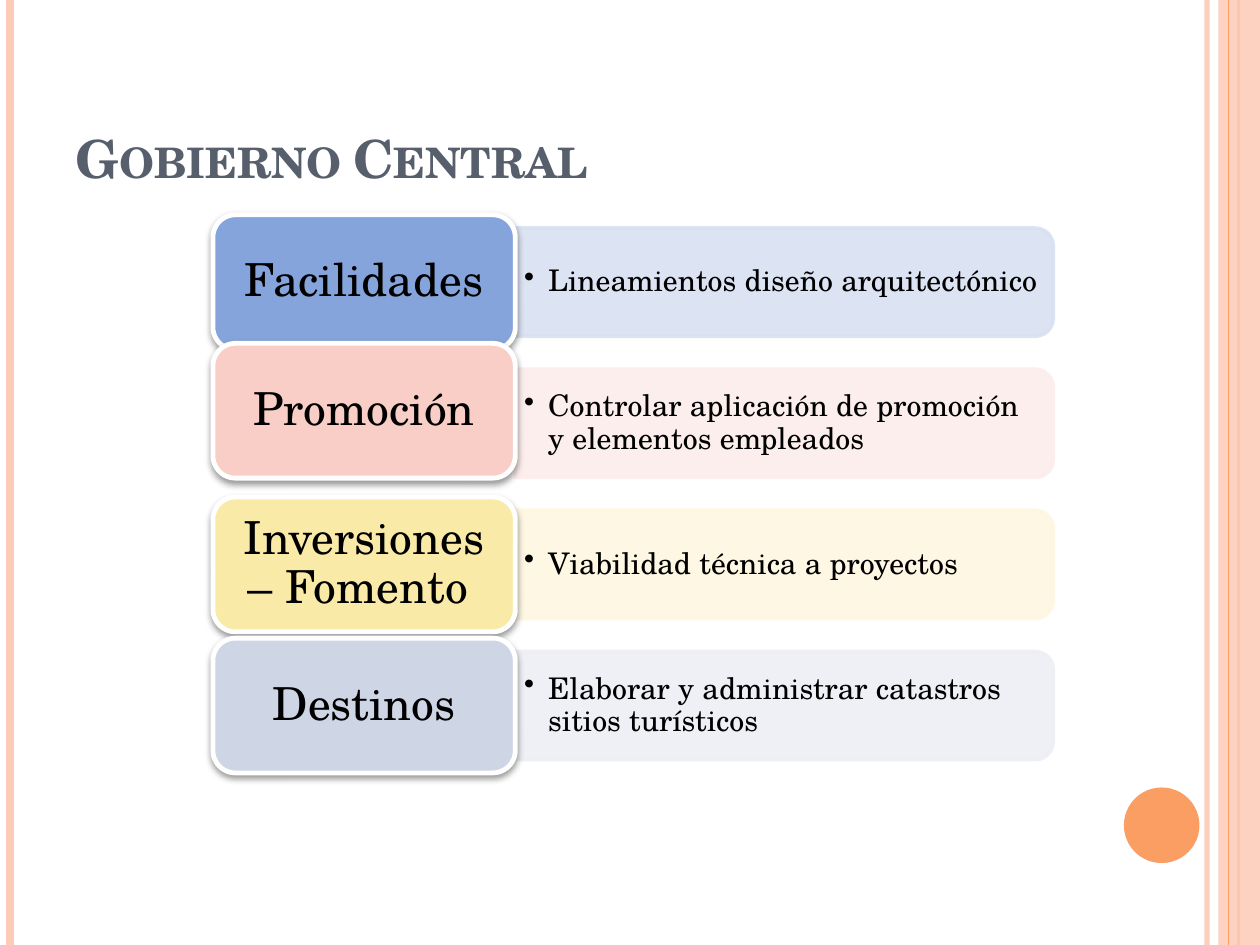
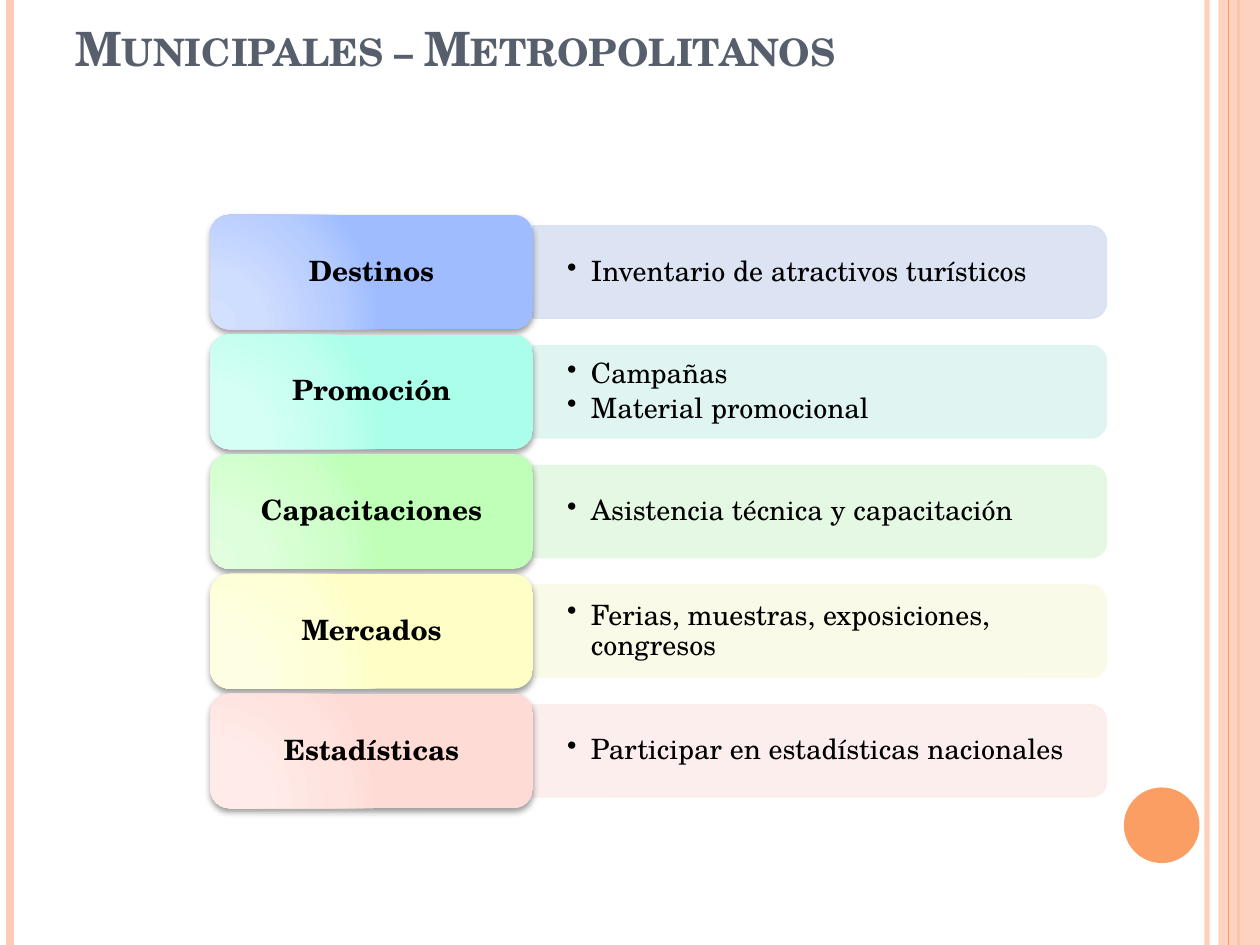
import pptx
import pptx.util
import pptx.dml.color
import pptx.enum.shapes
import pptx.enum.text
import pptx.oxml
import pptx.oxml.ns
from lxml import etree

RGB = pptx.dml.color.RGBColor
SHAPE = pptx.enum.shapes.MSO_SHAPE
STRAIGHT = pptx.enum.shapes.MSO_CONNECTOR.STRAIGHT
ANCHOR = pptx.enum.text.MSO_ANCHOR
Inches, Pt, qn = pptx.util.Inches, pptx.util.Pt, pptx.oxml.ns.qn

# Shared look
FONT = "TeX Gyre Schola"
SLIDE_W, SLIDE_H = 10, 7.5
PEACH, ORANGE = RGB(0xFD, 0xCC, 0xB8), RGB(0xFB, 0x9E, 0x64)
SLATE, BLACK, WHITE = RGB(0x57, 0x5F, 0x6D), RGB(0, 0, 0), RGB(255, 255, 255)
BLUE_TINT, PINK_TINT = RGB(0xD9, 0xE0, 0xF2), RGB(0xFC, 0xED, 0xEB)
CREAM_TINT, GREY_TINT = RGB(0xFD, 0xF7, 0xE1), RGB(0xED, 0xEF, 0xF5)
AQUA_TINT, GREEN_TINT = RGB(0xDD, 0xF5, 0xF1), RGB(0xE3, 0xF8, 0xE1)
YELLOW_TINT = RGB(0xFA, 0xFA, 0xE6)
BLUE, PINK = RGB(0x86, 0xA4, 0xDC), RGB(0xF8, 0xCE, 0xC7)
YELLOW, GREY = RGB(0xFA, 0xEA, 0xA8), RGB(0xCE, 0xD5, 0xE5)
GRADIENT_STOPS = (0, 30, 75, 100)
BLUE_GLOW = ("D3E0FF", "CFDDFF", "B6CCFF", "9EBCFF")
AQUA_GLOW = ("D8FFF5", "D5FFF4", "C0FFEF", "ABFFEA")
GREEN_GLOW = ("E1FFDE", "DEFFDB", "CEFFC9", "BFFFB8")
YELLOW_GLOW = ("FEFFE4", "FEFFE2", "FEFFD4", "FEFFC6")
PINK_GLOW = ("FFEEEB", "FFECE9", "FFE3DF", "FFDBD5")

# Rules of the frame: x, colour, width, opacity
RULES = [(9.58, PEACH, 3, 93), (0.08, PEACH, 4.5, 100), (9.83, ORANGE, 1.5, 100)]
TOP_RULE = (9.75, ORANGE, 0.75, 100)

# Each row: label, details, label fill, band tint, vertical shift of the label
SLIDES = [
    dict(title="Gobierno Central", title_size=30, title_bottom=0.05,
         left=1.69, label=(2.4, 1.07), band=(4.27, 0.86), first_middle=2.24, pitch=1.12,
         label_size=26, bold=False, label_inset=(0.11, 0.05), outline=2.75,
         detail_size=17, detail_box=(4.22, 0.77), detail_inset=(0.07, 0.04), band_line=2,
         rows=[
             ("Facilidades", ["Lineamientos diseño arquitectónico"], BLUE, BLUE_TINT, 0),
             ("Promoción", ["Controlar aplicación de promoción y elementos empleados"],
              PINK, PINK_TINT, -0.1),
             ("Inversiones – Fomento ", ["Viabilidad técnica a proyectos"],
              YELLOW, CREAM_TINT, 0),
             ("Destinos", ["Elaborar y administrar catastros sitios turísticos"],
              GREY, GREY_TINT, 0),
         ]),
    dict(title="Municipales – Metropolitanos", title_size=27, title_bottom=0.95,
         left=1.67, label=(2.56, 0.91), band=(4.55, 0.73), first_middle=2.16, pitch=0.95,
         label_size=16, bold=True, label_inset=(0.07, 0.03), outline=0,
         detail_size=16, detail_box=(4.52, 0.66), detail_inset=(0.27, 0.14), band_line=1,
         rows=[
             ("Destinos", ["Inventario de atractivos turísticos"], BLUE_GLOW, BLUE_TINT, 0),
             ("Promoción", ["Campañas", "Material promocional"], AQUA_GLOW, AQUA_TINT, 0),
             ("Capacitaciones", ["Asistencia técnica y capacitación"],
              GREEN_GLOW, GREEN_TINT, 0),
             ("Mercados", ["Ferias, muestras, exposiciones, congresos"],
              YELLOW_GLOW, YELLOW_TINT, 0),
             ("Estadísticas", ["Participar en estadísticas nacionales"],
              PINK_GLOW, PINK_TINT, 0),
         ]),
]


def set_opacity(sp, percent):
    for clr in sp.element.spPr.iter(qn("a:srgbClr")):
        etree.SubElement(clr, qn("a:alpha"), val=str(percent * 1000))


def add_rule(slide, x, color, width, opacity):
    ln = slide.shapes.add_connector(STRAIGHT, Inches(x), 0, Inches(x), Inches(SLIDE_H))
    ln.line.color.rgb, ln.line.width = color, Pt(width)
    set_opacity(ln, opacity)
    etree.SubElement(ln.element.spPr, qn("a:effectLst"))
    return ln


def add_shape(slide, kind, x, y, w, h, fill, line=None, line_width=0):
    sp = slide.shapes.add_shape(kind, *map(Inches, (x, y, w, h)))
    sp.shadow.inherit = False
    sp.fill.solid()
    sp.fill.fore_color.rgb = fill
    if line_width:
        sp.line.color.rgb, sp.line.width = line, Pt(line_width)
    else:
        sp.line.fill.background()
    return sp


def glow_fill(sp, colors):
    """Fill with a circular gradient that starts in the lower left corner."""
    stops = "".join(f'<a:gs pos="{pos * 1000}"><a:srgbClr val="{c}"/></a:gs>'
                    for pos, c in zip(GRADIENT_STOPS, colors))
    grad = pptx.oxml.parse_xml(
        f'<a:gradFill {pptx.oxml.ns.nsdecls("a")} rotWithShape="1"><a:gsLst>{stops}</a:gsLst>'
        '<a:path path="circle"><a:fillToRect l="5000" t="100000" r="120000" b="10000"/>'
        '</a:path></a:gradFill>')
    spPr = sp.element.spPr
    spPr.replace(spPr.find(qn("a:solidFill")), grad)


def drop_shadow(sp):
    shadow = etree.SubElement(sp.element.spPr.find(qn("a:effectLst")), qn("a:outerShdw"),
                              blurRad=str(Pt(4)), dist=str(Pt(2)), dir="5400000",
                              rotWithShape="0")
    clr = etree.SubElement(shadow, qn("a:srgbClr"), val="000000")
    etree.SubElement(clr, qn("a:alpha"), val="40000")


def set_frame(tf, inset, anchor=ANCHOR.MIDDLE):
    tf.word_wrap = True
    tf.vertical_anchor = anchor
    tf.margin_left = tf.margin_right = Inches(inset[0])
    tf.margin_top = tf.margin_bottom = Inches(inset[1])


def set_font(p, size, color=BLACK, bold=False):
    p.font.name, p.font.size, p.font.bold = FONT, Pt(size), bold
    p.font.color.rgb = color


def build_frame(slide, layout):
    """Draw the side bands and the disc, then hand them to the layout."""
    parts = [add_rule(slide, *rule) for rule in RULES]
    side = add_shape(slide, SHAPE.RECTANGLE, 9.67, 0, SLIDE_W - 9.67, SLIDE_H, PEACH)
    set_opacity(side, 87)
    parts += [side, add_rule(slide, *TOP_RULE),
              add_shape(slide, SHAPE.OVAL, 8.92, 6.25, 0.6, 0.6, ORANGE)]
    for part in parts:
        layout.shapes.element.append(part.element)


def add_title(slide, s):
    title = slide.shapes.title
    title.left, title.top, title.width, title.height = map(Inches, (0.5, 0.3, 8.17, 1.25))
    tf = title.text_frame
    tf.text = s["title"]
    set_frame(tf, (0.1, 0.05), ANCHOR.BOTTOM)
    tf.margin_bottom = Inches(s["title_bottom"])
    tf.auto_size = pptx.enum.text.MSO_AUTO_SIZE.NONE
    p = tf.paragraphs[0]
    p.alignment = pptx.enum.text.PP_ALIGN.LEFT
    set_font(p, s["title_size"], SLATE, True)
    p.runs[0].font.bold = True
    p.runs[0].font._element.set("cap", "small")


def add_details(slide, s, details, x, middle):
    w, h = s["detail_box"]
    box = slide.shapes.add_textbox(*map(Inches, (x, middle - h / 2, w, h)))
    tf = box.text_frame
    tf.text = "\n".join(details)
    set_frame(tf, s["detail_inset"])
    for p in tf.paragraphs:
        set_font(p, s["detail_size"])
        p.line_spacing = 0.9
        p.space_after = Pt(round(0.15 * s["detail_size"], 1))
        pPr = p._p.get_or_add_pPr()
        pPr.set("marL", str(Inches(0.19)))
        pPr.set("indent", str(-Inches(0.19)))
        bullet = etree.Element(qn("a:buChar"), char="•")
        pPr.insert(list(pPr).index(pPr.find(qn("a:defRPr"))), bullet)


def add_row(slide, s, i, row):
    text, details, fill, tint, shift = row
    middle = s["first_middle"] + i * s["pitch"]
    label_w, label_h = s["label"]
    band_w, band_h = s["band"]
    band_x = s["left"] + label_w

    # Band: a tab turned a quarter, so its round corners face right
    band = add_shape(slide, SHAPE.ROUND_2_SAME_RECTANGLE, band_x + (band_w - band_h) / 2,
                     middle - band_w / 2, band_h, band_w, tint, tint, s["band_line"])
    band.rotation = 90
    set_opacity(band, 90)
    add_details(slide, s, details, band_x, middle)

    # Label
    glows = isinstance(fill, tuple) and not isinstance(fill, RGB)
    sp = add_shape(slide, SHAPE.ROUNDED_RECTANGLE, s["left"], middle - label_h / 2 + shift,
                   label_w, label_h, WHITE if glows else fill, WHITE, s["outline"])
    if glows:
        glow_fill(sp, fill)
    drop_shadow(sp)
    tf = sp.text_frame
    tf.text = text
    set_frame(tf, s["label_inset"])
    p = tf.paragraphs[0]
    p.alignment = pptx.enum.text.PP_ALIGN.CENTER
    p.line_spacing = 0.9
    set_font(p, s["label_size"], bold=s["bold"])


def main():
    prs = pptx.Presentation()
    prs.slide_width, prs.slide_height = Inches(SLIDE_W), Inches(SLIDE_H)
    layout = prs.slide_layouts[5]
    for n, s in enumerate(SLIDES):
        slide = prs.slides.add_slide(layout)
        if n == 0:
            build_frame(slide, layout)
        add_title(slide, s)
        for i, row in enumerate(s["rows"]):
            add_row(slide, s, i, row)
    prs.save("out.pptx")


if __name__ == "__main__":
    main()
